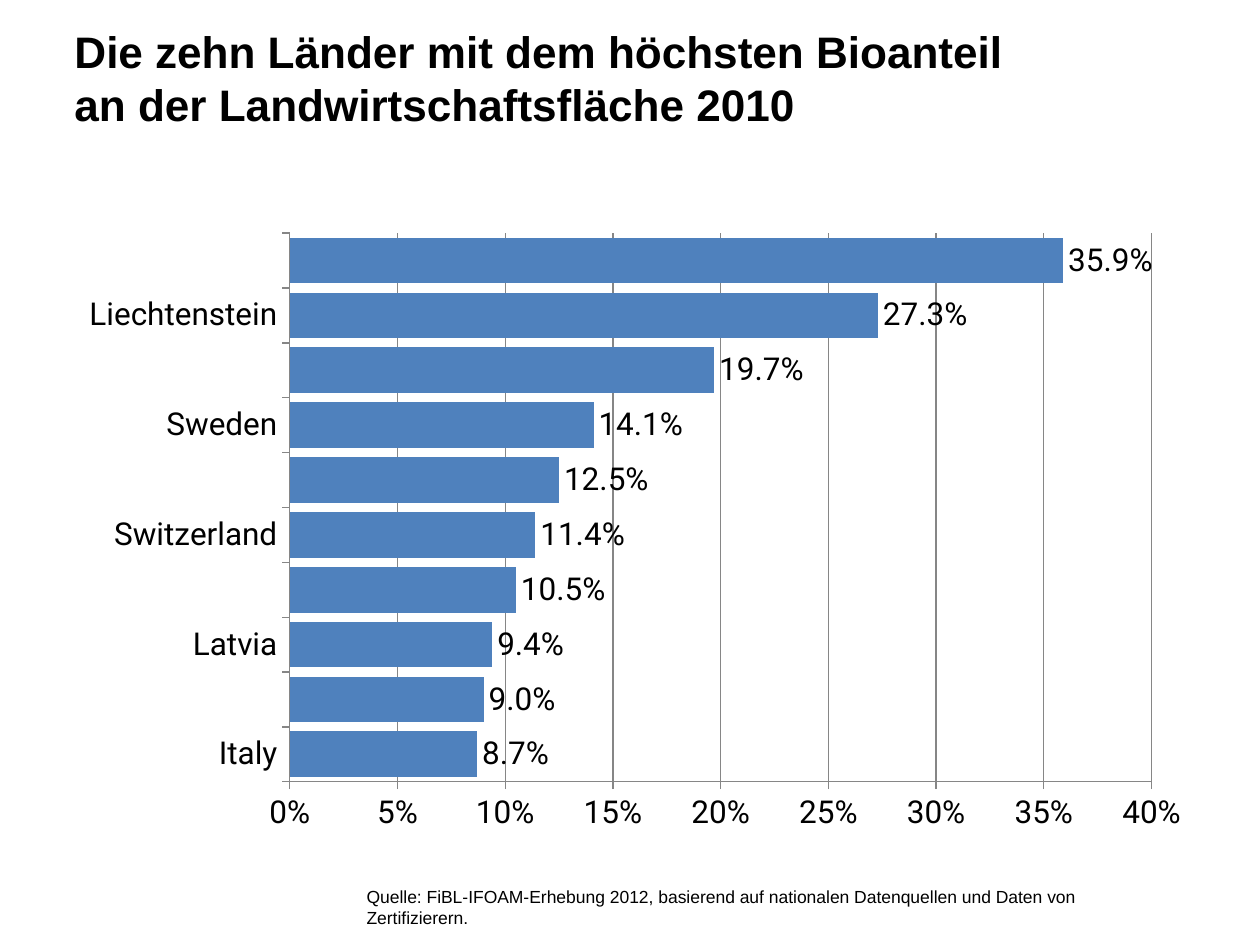
from lxml import etree
from pptx import Presentation
from pptx.chart.data import CategoryChartData
from pptx.dml.color import RGBColor
from pptx.enum import chart as ch, text
from pptx.oxml import ns
from pptx.util import Cm, Pt

BLACK = RGBColor(0x00, 0x00, 0x00)
WHITE = RGBColor(0xFF, 0xFF, 0xFF)
BLUE = RGBColor(0x4F, 0x81, 0xBD)
GREY = RGBColor(0x86, 0x86, 0x86)

TITLE = "Die zehn Länder mit dem höchsten Bioanteil\van der Landwirtschaftsfläche 2010"
SOURCE = ("Quelle: FiBL-IFOAM-Erhebung 2012, basierend auf nationalen "
          "Datenquellen und Daten von Zertifizierern.")
ORGANIC_SHARES = [
    ("Italy", 0.087),
    ("Slovakia", 0.09),
    ("Latvia", 0.094),
    ("Czech Republic", 0.105),
    ("Switzerland", 0.114),
    ("Estonia", 0.125),
    ("Sweden", 0.141),
    ("Austria", 0.197),
    ("Liechtenstein", 0.273),
    ("Falkland Islands (Malvinas)", 0.359),
]
# Inner plot area as fractions of the chart
PLOT = {"x": 0.2, "y": 0.02, "w": 0.76, "h": 0.88}


def set_font(font, size, name="Arial", bold=False):
    font.size, font.name, font.bold = Pt(size), name, bold
    font.color.rgb = BLACK


def place_plot(plot_area):
    """Give the plot area a fixed inner layout and a white fill."""
    for old in plot_area.findall(ns.qn("c:layout")):
        plot_area.remove(old)
    layout = etree.Element(ns.qn("c:layout"))
    manual = etree.SubElement(layout, ns.qn("c:manualLayout"))
    settings = [("layoutTarget", "inner"), ("xMode", "edge"), ("yMode", "edge")]
    for tag, value in settings + list(PLOT.items()):
        etree.SubElement(manual, ns.qn("c:" + tag)).set("val", str(value))
    plot_area.insert(0, layout)
    props = etree.SubElement(plot_area, ns.qn("c:spPr"))
    fill = etree.SubElement(props, ns.qn("a:solidFill"))
    etree.SubElement(fill, ns.qn("a:srgbClr")).set("val", str(WHITE))


def add_share_chart(s):
    data = CategoryChartData(number_format="0.0%")
    data.categories = [country for country, _ in ORGANIC_SHARES]
    data.add_series("Series 1", [share for _, share in ORGANIC_SHARES])
    chart = s.shapes.add_chart(ch.XL_CHART_TYPE.BAR_CLUSTERED, Cm(1.27), Cm(4.45),
                               Cm(22.86), Cm(12.57), data).chart
    chart.has_legend = chart.has_title = False
    set_font(chart.font, 18, "Roboto")

    plot = chart.plots[0]
    plot.gap_width = 20
    plot.vary_by_categories = False
    fill = plot.series[0].format.fill
    fill.solid()
    fill.fore_color.rgb = BLUE
    labels = plot.series[0].data_labels
    labels.show_value = True
    labels.number_format, labels.number_format_is_linked = "0.0%", False
    labels.position = ch.XL_LABEL_POSITION.OUTSIDE_END
    set_font(labels.font, 18, "Roboto")

    countries, shares = chart.category_axis, chart.value_axis
    for axis in (countries, shares):
        axis.major_tick_mark = ch.XL_TICK_MARK.OUTSIDE
        axis.minor_tick_mark = ch.XL_TICK_MARK.NONE
        axis.format.line.color.rgb = GREY
        set_font(axis.tick_labels.font, 18, "Roboto")
    countries.has_major_gridlines = False
    skip = etree.Element(ns.qn("c:tickLblSkip"))
    skip.set("val", "2")
    plot_area = chart.element.find(".//" + ns.qn("c:plotArea"))
    plot_area.find(".//" + ns.qn("c:noMultiLvlLbl")).addprevious(skip)

    shares.minimum_scale, shares.maximum_scale, shares.major_unit = 0, 0.4, 0.05
    shares.tick_labels.number_format = "0%"
    shares.tick_labels.number_format_is_linked = False
    shares.has_major_gridlines = True
    shares.major_gridlines.format.line.color.rgb = GREY
    place_plot(plot_area)


def main():
    prs = Presentation()
    prs.slide_width, prs.slide_height = Cm(25.4), Cm(19.05)
    s = prs.slides.add_slide(prs.slide_layouts[5])

    title = s.shapes.title
    title.left, title.top, title.width, title.height = Cm(1.5), Cm(0.64), Cm(22.91), Cm(1.98)
    tf = title.text_frame
    tf.text = TITLE
    tf.auto_size = text.MSO_AUTO_SIZE.NONE
    tf.vertical_anchor = text.MSO_ANCHOR.MIDDLE
    tf.margin_left = tf.margin_top = 0
    p = tf.paragraphs[0]
    p.alignment = text.PP_ALIGN.LEFT
    for r in p.runs:
        set_font(r.font, 25.2, bold=True)

    add_share_chart(s)

    tf = s.shapes.add_textbox(Cm(7.14), Cm(17.73), Cm(14.81), Cm(1.12)).text_frame
    tf.word_wrap = True
    tf.auto_size = text.MSO_AUTO_SIZE.SHAPE_TO_FIT_TEXT
    tf.text = SOURCE
    set_font(tf.paragraphs[0].runs[0].font, 10)

    prs.save("out.pptx")


if __name__ == "__main__":
    main()
